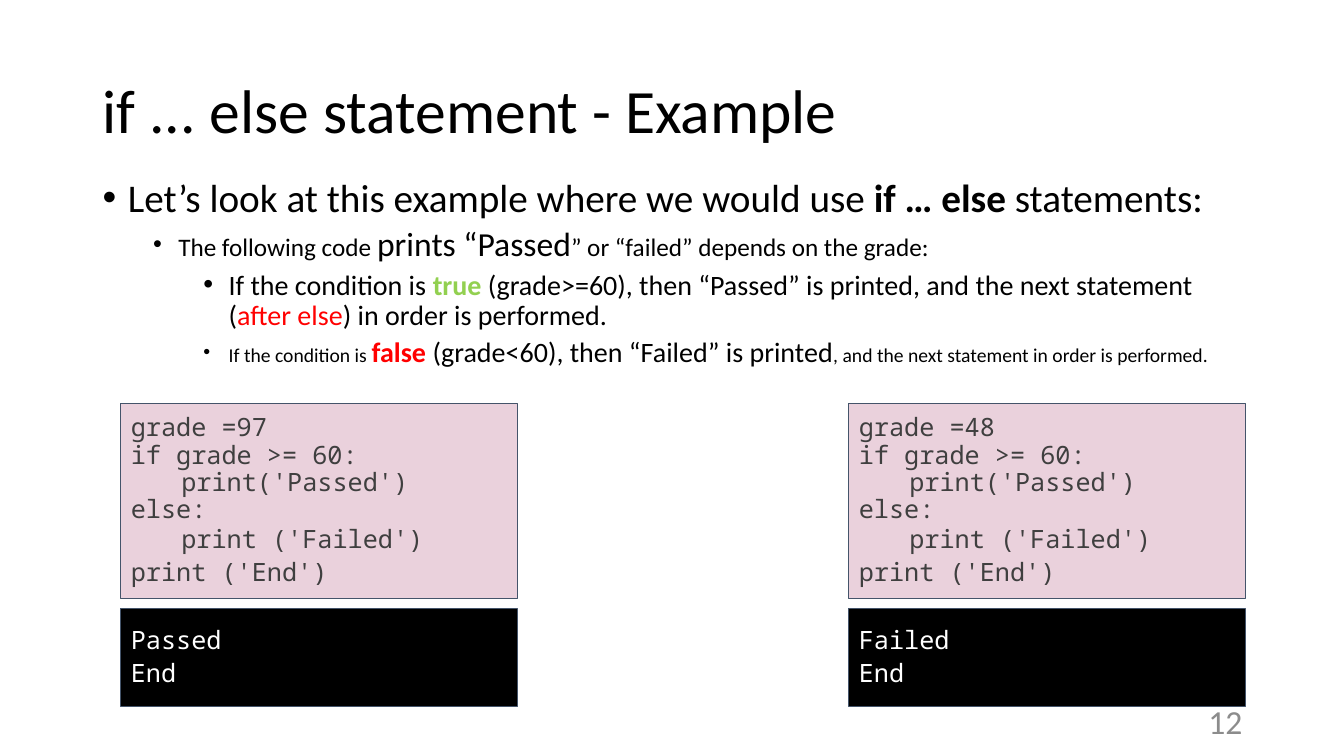
from dataclasses import dataclass

from lxml import etree
from pptx import Presentation
from pptx import util as u
from pptx.dml.color import RGBColor
from pptx.enum import shapes, text
from pptx.oxml import ns


@dataclass(frozen=True)
class Theme:
    body_font: str = "Calibri"
    code_font: str = "Noto Sans Mono"
    ink: str = "000000"
    true_color: str = "92D050"
    false_color: str = "FF0000"
    number_color: str = "8C8C8C"
    code_ink: str = "3F3F3F"
    code_fill: str = "EAD1DC"
    output_ink: str = "FFFFFF"
    output_fill: str = "000000"
    border: str = "44546A"
    title_size: int = 44
    lead_size: int = 28
    large_size: int = 24
    detail_size: int = 20
    code_size: int = 18
    small_size: int = 14


class SlideBuilder:
    def __init__(self, slide, theme):
        self.slide = slide
        self.theme = theme

    def set_font(self, font, size, color, name=None, bold=None):
        font.name = name or self.theme.body_font
        font.size = u.Pt(size)
        font.color.rgb = RGBColor.from_string(color)
        font.bold = bold

    def text_box(self, box, anchor=text.MSO_ANCHOR.TOP):
        frame = self.slide.shapes.add_textbox(*map(u.Inches, box)).text_frame
        frame.word_wrap = True
        frame.vertical_anchor = anchor
        return frame

    def line(self, box, words, size, color, align=text.PP_ALIGN.LEFT, spacing=1.0):
        """Add one vertically centred line of text."""
        paragraph = self.text_box(box, text.MSO_ANCHOR.MIDDLE).paragraphs[0]
        paragraph.text = words
        paragraph.alignment = align
        paragraph.line_spacing = spacing
        self.set_font(paragraph.font, size, color)

    def bullets(self, box, items):
        """Add bullets given as (level, runs), each run (words, size, color, bold)."""
        frame = self.text_box(box)
        for index, (level, runs) in enumerate(items):
            paragraph = frame.paragraphs[0] if index == 0 else frame.add_paragraph()
            paragraph.level = level
            paragraph.line_spacing = 0.9
            paragraph.space_before = u.Pt(5 if level else 10)
            properties = paragraph._p.get_or_add_pPr()
            properties.set("marL", str(u.Inches(0.25 + 0.5 * level)))
            properties.set("indent", str(u.Inches(-0.25)))
            etree.SubElement(properties, ns.qn("a:buFont"), typeface="Arial")
            etree.SubElement(properties, ns.qn("a:buChar"), char="•")
            for words, size, color, bold in runs:
                run = paragraph.add_run()
                run.text = words
                self.set_font(run.font, size, color, bold=bold)

    def panel(self, box, lines, fill, ink, first_spaced=0):
        """Add a monospaced panel; lines from first_spaced on get extra spacing."""
        shape = self.slide.shapes.add_shape(
            shapes.MSO_SHAPE.RECTANGLE, *map(u.Inches, box))
        shape.shadow.inherit = False
        shape.fill.solid()
        shape.fill.fore_color.rgb = RGBColor.from_string(fill)
        shape.line.color.rgb = RGBColor.from_string(self.theme.border)
        shape.line.width = u.Pt(0.75)
        frame = shape.text_frame
        frame.word_wrap = True
        frame.vertical_anchor = text.MSO_ANCHOR.MIDDLE
        frame.margin_top = frame.margin_bottom = u.Inches(0.1)
        frame.text = "\n".join(lines)
        for index, paragraph in enumerate(frame.paragraphs):
            paragraph.alignment = text.PP_ALIGN.LEFT
            paragraph.line_spacing = 0.9
            gap = u.Pt(2 if index >= first_spaced else 0)
            paragraph.space_before = paragraph.space_after = gap
            self.set_font(paragraph.font, self.theme.code_size, ink, self.theme.code_font)

    def example(self, left, grade, result):
        """Add a code panel with its output panel below."""
        theme = self.theme
        code = [f"grade ={grade}", "if grade >= 60:", "\tprint('Passed')",
                "else:", "\tprint ('Failed')", "print ('End')"]
        self.panel((left, 4, 3.93, 1.94), code, theme.code_fill, theme.code_ink,
                   first_spaced=4)
        self.panel((left, 6.04, 3.93, 0.97), [result, "End"],
                   theme.output_fill, theme.output_ink)


def main():
    presentation = Presentation()
    presentation.slide_width = u.Inches(13.33)
    presentation.slide_height = u.Inches(7.5)
    theme = Theme()
    slide = presentation.slides.add_slide(presentation.slide_layouts[6])
    builder = SlideBuilder(slide, theme)

    builder.line((0.92, 0.4, 11.5, 1.45), "if ... else statement - Example",
                 theme.title_size, theme.ink, spacing=0.9)
    lead, large, detail = theme.lead_size, theme.large_size, theme.detail_size
    medium, small, ink = theme.code_size, theme.small_size, theme.ink
    builder.bullets((0.92, 1.72, 11.5, 4.76), [
        (0, [("Let’s look at this example where we would use ", lead, ink, False),
             ("if … else ", lead, ink, True),
             ("statements:", lead, ink, False)]),
        (1, [("The following code ", medium, ink, False),
             ("prints “Passed", large, ink, False),
             ("” or “failed” depends on the grade:", medium, ink, False)]),
        (2, [("If the condition is ", detail, ink, False),
             ("true ", detail, theme.true_color, True),
             ("(grade>=60), then “Passed” is printed, and the next statement (",
              detail, ink, False),
             ("after else", detail, theme.false_color, False),
             (") in order is performed.", detail, ink, False)]),
        (2, [("If the condition is ", small, ink, False),
             ("false ", detail, theme.false_color, True),
             ("(grade<60), then “Failed” is printed", detail, ink, False),
             (", and the next statement in order is performed.", small, ink, False)]),
    ])
    builder.line((9.42, 6.95, 3, 0.4), "12", theme.large_size, theme.number_color,
                 align=text.PP_ALIGN.RIGHT)
    for left, grade, result in ((1.2, 97, "Passed"), (8.42, 48, "Failed")):
        builder.example(left, grade, result)

    presentation.save("out.pptx")


if __name__ == "__main__":
    main()
